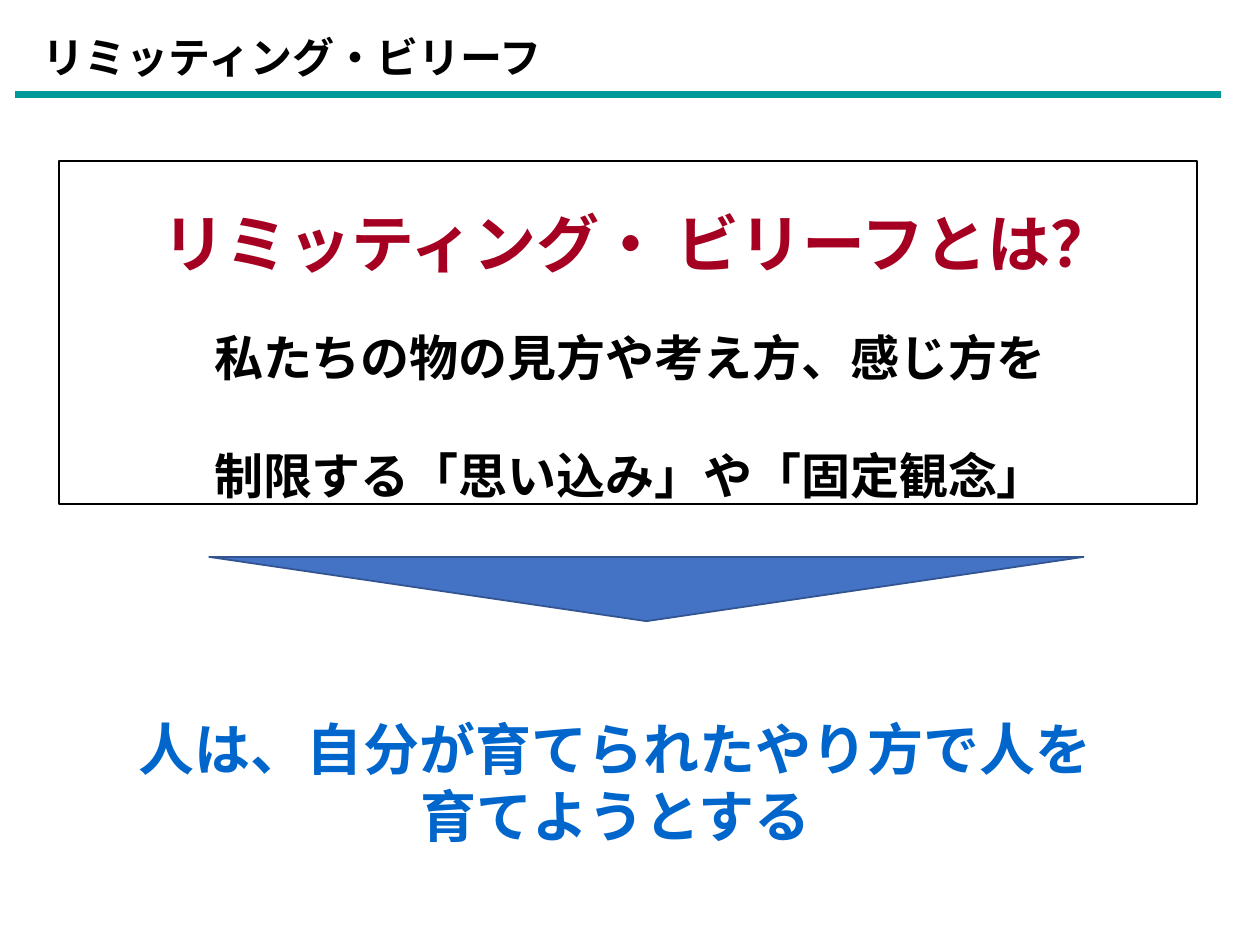
from dataclasses import dataclass

from lxml import etree
from pptx import Presentation
from pptx.dml.color import RGBColor
from pptx.enum.shapes import MSO_CONNECTOR, MSO_SHAPE
from pptx.enum.text import MSO_ANCHOR, MSO_AUTO_SIZE, PP_ALIGN
from pptx.oxml.ns import qn
from pptx.util import Inches, Pt

LEFT, CENTER = PP_ALIGN.LEFT, PP_ALIGN.CENTER
TOP, FIXED = MSO_ANCHOR.TOP, MSO_AUTO_SIZE.NONE
RECT, WEDGE = MSO_SHAPE.RECTANGLE, MSO_SHAPE.ISOSCELES_TRIANGLE
LINE = MSO_CONNECTOR.STRAIGHT
COLS, ROWS = 100, 75
TITLE_ONLY = 5


@dataclass(frozen=True)
class Theme:
    font: str = "Noto Sans CJK JP"
    ink: str = "000000"
    red: str = "A50021"
    blue: str = "0066CC"
    teal: str = "009999"
    fill: str = "4472C4"
    edge: str = "325491"
    title: int = 24
    body: int = 28
    claim: int = 32
    head: int = 36
    lead: float = 1.2  # line height as a share of the type size


class Page:
    """Holds the theme and the slide; lengths are grid columns and rows."""

    def __init__(self, deck, theme):
        self.deck, self.theme = deck, theme
        self.slide = deck.slides.add_slide(deck.slide_layouts[TITLE_ONLY])

    def x(self, cols):
        return round(self.deck.slide_width * cols / COLS)

    def y(self, rows):
        return round(self.deck.slide_height * rows / ROWS)

    def area(self, left, top, wide, high):
        return self.x(left), self.y(top), self.x(wide), self.y(high)

    def style(self, shape, lines, size, color, align, gap=0):
        frame = shape.text_frame
        form = {"word_wrap": True, "auto_size": FIXED, "vertical_anchor": TOP}
        for name, value in form.items():
            setattr(frame, name, value)
        frame.text = "\n".join(lines)
        for i, para in enumerate(frame.paragraphs):
            form = {"alignment": align, "space_before": Pt(gap if i else 0),
                    "line_spacing": Pt(size * self.theme.lead)}
            for name, value in form.items():
                setattr(para, name, value)
            font = para.runs[0].font
            form = {"size": Pt(size), "bold": True, "name": self.theme.font}
            for name, value in form.items():
                setattr(font, name, value)
            font.color.rgb = RGBColor.from_string(color)
            # East Asian glyphs take their own typeface entry
            props = para.runs[0]._r.get_or_add_rPr()
            etree.SubElement(props, qn("a:ea"), typeface=self.theme.font)

    def title(self, area, line):
        shape = self.slide.shapes.title
        names = ("left", "top", "width", "height")
        for name, value in zip(names, self.area(*area)):
            setattr(shape, name, value)
        self.style(shape, [line], self.theme.title, self.theme.ink, LEFT)

    def text(self, area, lines, size, color, align=CENTER, gap=0):
        box = self.slide.shapes.add_textbox(*self.area(*area))
        self.style(box, lines, size, color, align, gap)

    def shape(self, kind, area, edge, fill=None, turn=0):
        shape = self.slide.shapes.add_shape(kind, *self.area(*area))
        shape.shadow.inherit = False
        shape.rotation = turn
        if fill:
            shape.fill.solid()
            shape.fill.fore_color.rgb = RGBColor.from_string(fill)
        else:
            shape.fill.background()
        self.stroke(shape.line, edge, 1)

    def rule(self, left, right, row, color, width):
        line = self.slide.shapes.add_connector(
            LINE, self.x(left), self.y(row), self.x(right), self.y(row))
        self.stroke(line.line, color, width)
        etree.SubElement(line._element.spPr, qn("a:effectLst"))

    def stroke(self, line, color, width):
        line.color.rgb = RGBColor.from_string(color)
        line.width = Pt(width)


def main():
    deck = Presentation()
    deck.slide_width, deck.slide_height = Inches(10), Inches(7.5)
    theme = Theme()
    page = Page(deck, theme)

    # Title and its rule
    page.title((2.4, 2, 79.4, 5), "リミッティング・ビリーフ")
    page.rule(1.2, 96.9, 7.5, theme.teal, 4.5)

    # Framed definition, its two lines one blank line apart
    page.text((11.9, 15.7, 83.6, 13.1), ["リミッティング・ ビリーフとは？"],
              theme.head, theme.red, LEFT)
    page.text((2.9, 25.5, 94.2, 15.1),
              ["私たちの物の見方や考え方、感じ方を",
               "制限する「思い込み」や「固定観念」"],
              theme.body, theme.ink, gap=theme.body * theme.lead)
    page.shape(RECT, (4.7, 12.8, 90.3, 27.2), theme.ink)

    # Wedge pointing down to the conclusion
    page.shape(WEDGE, (16.6, 44.2, 69.4, 5.1), theme.edge, theme.fill, 180)
    page.text((6.9, 56.2, 83.9, 11.8),
              ["人は、自分が育てられたやり方で人を", "育てようとする"],
              theme.claim, theme.blue)

    deck.save("out.pptx")


if __name__ == "__main__":
    main()
